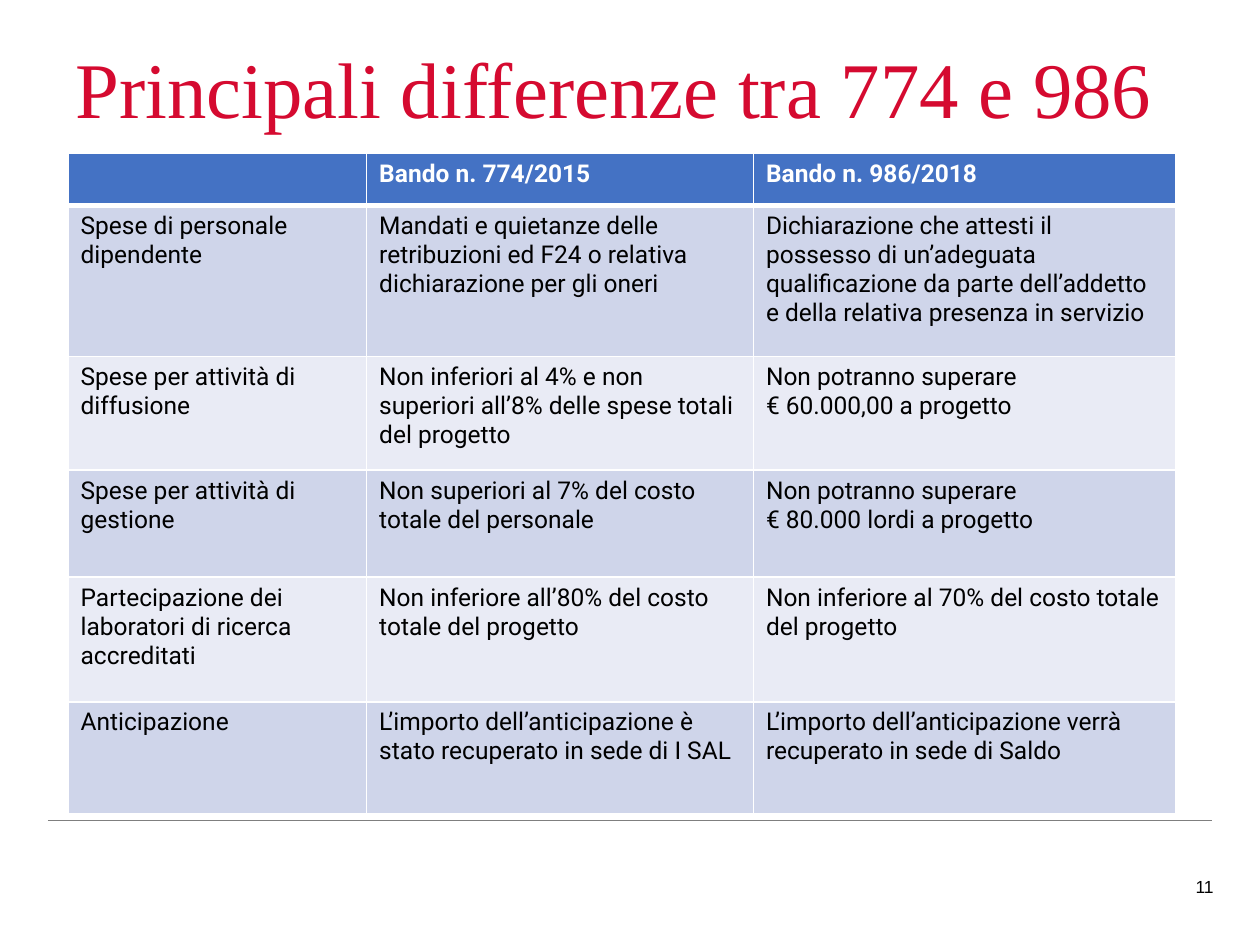
import copy

import pptx
import pptx.dml.color
import pptx.enum.shapes
import pptx.enum.text
import pptx.oxml
import pptx.oxml.ns
import pptx.util
from pptx.util import Inches

COLORS = {
    "title": "D50A30",
    "header": "4472C4",
    "odd_row": "CFD5EA",
    "even_row": "E9EBF5",
    "white": "FFFFFF",
    "black": "000000",
    "rule": "7F7F7F",
}
TITLE_FORMAT = {"name": "Times New Roman", "size": pptx.util.Pt(45)}
HEADER_FORMAT = {"name": "Roboto", "size": pptx.util.Pt(14), "bold": True}
BODY_FORMAT = HEADER_FORMAT | {"bold": False}
NUMBER_FORMAT = {"name": "Arial", "size": pptx.util.Pt(10)}

COLUMN_WIDTHS = [2.37, 3.07, 3.35]
ROW_HEIGHTS = [0.41, 1.2, 0.9, 0.85, 0.99, 0.89]
ROWS = [
    ["", "Bando n. 774/2015", "Bando n. 986/2018"],
    [
        "Spese di personale dipendente",
        "Mandati e quietanze delle retribuzioni ed F24 o relativa dichiarazione per gli oneri",
        "Dichiarazione che attesti il possesso di un’adeguata qualificazione da parte "
        "dell’addetto e della relativa presenza in servizio",
    ],
    [
        "Spese per attività di diffusione",
        "Non inferiori al 4% e non superiori all’8% delle spese totali del progetto",
        "Non potranno superare \n€ 60.000,00 a progetto",
    ],
    [
        "Spese per attività di gestione",
        "Non superiori al 7% del costo totale del personale",
        "Non potranno superare \n€ 80.000 lordi a progetto",
    ],
    [
        "Partecipazione dei laboratori di ricerca accreditati",
        "Non inferiore all’80% del costo totale del progetto",
        "Non inferiore al 70% del costo totale del progetto",
    ],
    [
        "Anticipazione",
        "L’importo dell’anticipazione è stato recuperato in sede di I SAL",
        "L’importo dell’anticipazione verrà recuperato in sede di Saldo",
    ],
]


def rgb(color):
    return pptx.dml.color.RGBColor.from_string(COLORS[color])


def write(para, text, formats, color):
    para.text = text
    for span in para.runs:
        for key, value in formats.items():
            setattr(span.font, key, value)
        span.font.color.rgb = rgb(color)
    for line_break in para._p.findall(pptx.oxml.ns.qn("a:br")):
        line_break.append(copy.deepcopy(para.runs[0]._r.get_or_add_rPr()))


def add_text(page, area, text, formats, color, frame_formats, para_formats):
    box = page.shapes.add_textbox(*map(Inches, area))
    for key, value in frame_formats.items():
        setattr(box.text_frame, key, value)
    para = box.text_frame.paragraphs[0]
    for key, value in para_formats.items():
        setattr(para, key, value)
    write(para, text, formats, color)


def add_title(page, area):
    frame_formats = {
        "word_wrap": True,
        "margin_top": Inches(0.16),
        "vertical_anchor": pptx.enum.text.MSO_ANCHOR.TOP,
    }
    add_text(page, area, "Principali differenze tra 774 e 986", TITLE_FORMAT, "title",
             frame_formats, {"line_spacing": 0.8})


def add_borders(cell, bottom_width):
    properties = cell._tc.get_or_add_tcPr()
    widths = {"lnL": 1, "lnR": 1, "lnT": 1, "lnB": bottom_width}
    for position, (side, width) in enumerate(widths.items()):
        border = pptx.oxml.parse_xml(
            f'<a:{side} {pptx.oxml.ns.nsdecls("a")} w="{pptx.util.Pt(width)}">'
            f'<a:solidFill><a:srgbClr val="{COLORS["white"]}"/></a:solidFill></a:{side}>'
        )
        properties.insert(position, border)


def add_comparison(page, area):
    table = page.shapes.add_table(len(ROWS), len(COLUMN_WIDTHS), *map(Inches, area)).table
    for column, width in zip(table.columns, COLUMN_WIDTHS):
        column.width = Inches(width)
    for row, height in zip(table.rows, ROW_HEIGHTS):
        row.height = Inches(height)
    for index, texts in enumerate(ROWS):
        is_header = index == 0
        fill = "header" if is_header else "odd_row" if index % 2 else "even_row"
        formats = HEADER_FORMAT if is_header else BODY_FORMAT
        color = "white" if is_header else "black"
        for column, text in enumerate(texts):
            cell = table.cell(index, column)
            cell.fill.solid()
            cell.fill.fore_color.rgb = rgb(fill)
            add_borders(cell, 3 if is_header else 1)
            write(cell.text_frame.paragraphs[0], text, formats, color)


def add_footer(page, area):
    left, top, width, height = area
    rule = page.shapes.add_connector(
        pptx.enum.shapes.MSO_CONNECTOR.STRAIGHT,
        Inches(left), Inches(top), Inches(left + width), Inches(top),
    )
    rule.line.color.rgb = rgb("rule")
    rule.line.width = pptx.util.Pt(0.75)
    rule._element.spPr.append(
        pptx.oxml.parse_xml(f'<a:effectLst {pptx.oxml.ns.nsdecls("a")}/>')
    )
    number_area = (left + width - 0.3, top + 0.39, 0.41, height - 0.39)
    add_text(page, number_area, "11", NUMBER_FORMAT, "black",
             {"word_wrap": True}, {"alignment": pptx.enum.text.PP_ALIGN.RIGHT})


def main():
    deck = pptx.Presentation()
    deck.slide_width = Inches(10)
    deck.slide_height = Inches(7.5)
    page = deck.slides.add_slide(deck.slide_layouts[6])
    add_footer(page, (0.38, 6.51, 9.24, 0.66))
    add_title(page, (0.5, 0.3, 9.12, 1.25))
    add_comparison(page, (0.54, 1.22, sum(COLUMN_WIDTHS), sum(ROW_HEIGHTS)))
    deck.save("out.pptx")


if __name__ == "__main__":
    main()
